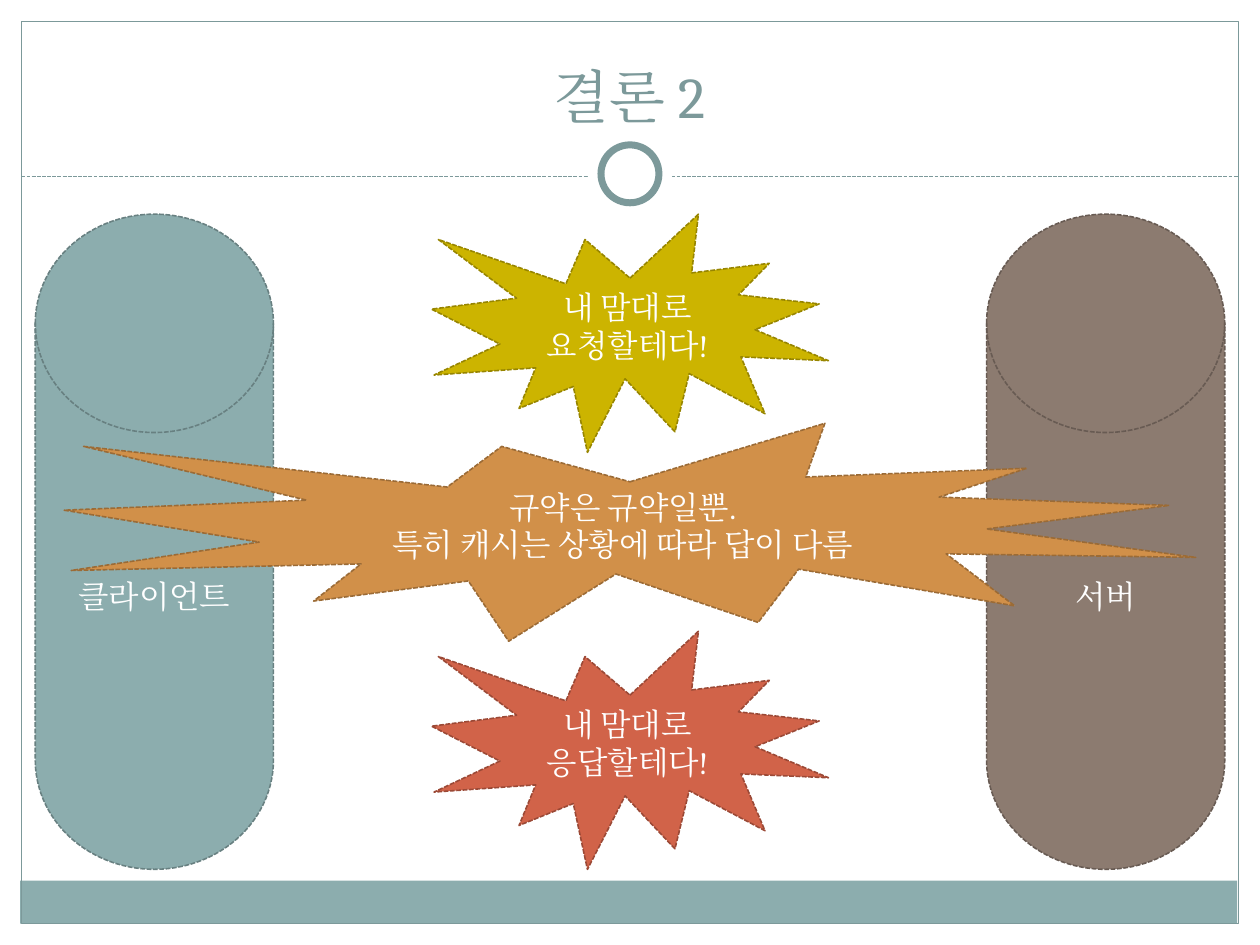
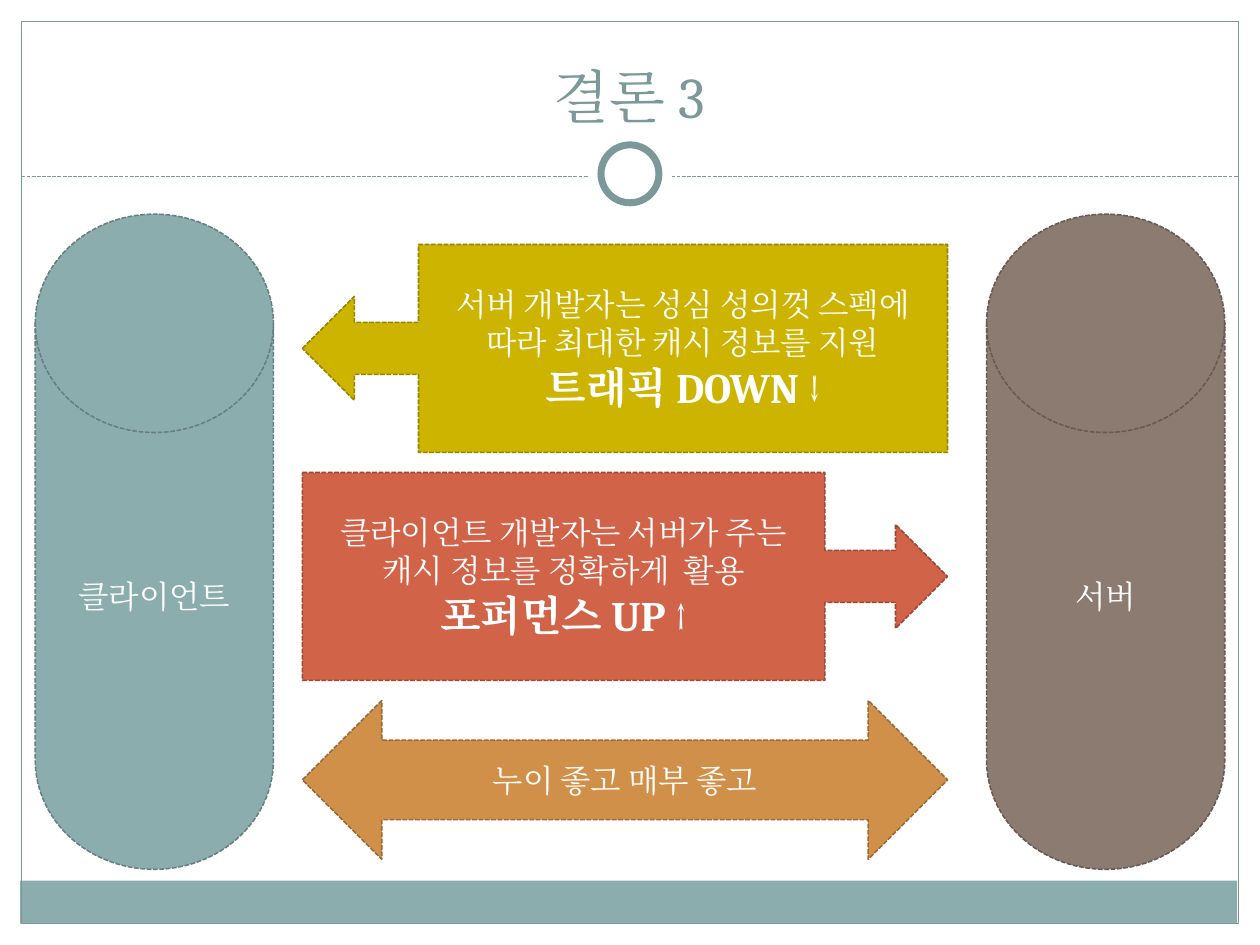
import pptx
import pptx.util
import pptx.dml.color
import pptx.enum.dml
import pptx.enum.shapes
import pptx.enum.text
import pptx.oxml.ns
import lxml.etree

Inches = pptx.util.Inches
Pt = pptx.util.Pt
KIND = pptx.enum.shapes.MSO_SHAPE
DASH = pptx.enum.dml.MSO_LINE.SQUARE_DOT
CENTER = pptx.enum.text.PP_ALIGN.CENTER
ANCHOR = pptx.enum.text.MSO_ANCHOR

FONT = "Cambria"
WHITE = "FFFFFF"
SLATE = "7C999A"
TEAL = ("8CADAE", "688081")
BROWN = ("8C7B70", "685B53")
GOLD = ("CCB400", "978500")
RED = ("D16349", "9B4936")
AMBER = ("D19049", "9B6B36")

WIDE, HIGH = 10, 7.5
EDGE = 0.17
RULE = 1.4
BODY = (0.28, 1.7, 9.44, 5.2)
POST = 1.89


def paint(code):
    return pptx.dml.color.RGBColor.from_string(code)


def stroke(line, code, width, dash=None):
    line.color.rgb = paint(code)
    line.width = Pt(width)
    if dash:
        line.dash_style = dash


def write(para, text, size, code, bold=False):
    para.alignment = CENTER
    run = para.add_run()
    run.text = text
    font = run.font
    font.name, font.size, font.bold = FONT, Pt(size), bold
    font.color.rgb = paint(code)
    asian = lxml.etree.Element(pptx.oxml.ns.qn("a:ea"), typeface=FONT)
    run.font._element.find(pptx.oxml.ns.qn("a:latin")).addnext(asian)


def plain(slide, kind, box, fill=None, line=None, width=0.75, dash=None):
    shape = slide.shapes.add_shape(kind, *map(Inches, box))
    shape.shadow.inherit = False
    if fill:
        shape.fill.solid()
        shape.fill.fore_color.rgb = paint(fill)
    else:
        shape.fill.background()
    if line:
        stroke(shape.line, line, width, dash)
    else:
        shape.line.fill.background()
    return shape


def label(slide, kind, box, tone, rows, adjust=(), inset=0.1):
    shape = plain(slide, kind, box, *tone, width=0.9, dash=DASH)
    for spot, value in enumerate(adjust):
        shape.adjustments[spot] = value
    frame = shape.text_frame
    frame.word_wrap = True
    frame.vertical_anchor = ANCHOR.MIDDLE
    frame.margin_left = frame.margin_right = Inches(inset)
    for spot, (text, size, bold) in enumerate(rows):
        para = frame.add_paragraph() if spot else frame.paragraphs[0]
        write(para, text, size, WHITE, bold)


def ring(slide, mid, size, **look):
    box = (WIDE / 2 - size / 2, mid - size / 2, size, size)
    return plain(slide, KIND.OVAL, box, **look)


def rule(slide, left, right, top):
    kind = pptx.enum.shapes.MSO_CONNECTOR.STRAIGHT
    line = slide.shapes.add_connector(kind, *map(Inches, (left, top, right, top)))
    stroke(line.line, SLATE, 0.75, DASH)
    props = line.element.spPr
    lxml.etree.SubElement(props, pptx.oxml.ns.qn("a:effectLst"))
    return line


def dress(slide, layout):
    for holder in list(layout.placeholders):
        if holder.placeholder_format.idx:
            holder.element.getparent().remove(holder.element)
    inner = WIDE - 2 * EDGE
    bands = (
        ((0, 0, WIDE, 1.52), WHITE),
        ((0, 0, EDGE, HIGH), WHITE),
        ((WIDE - EDGE, 0, EDGE, HIGH), WHITE),
        ((0.16, 6.99, inner, 0.34), TEAL[0]),
    )
    parts = [plain(slide, KIND.RECTANGLE, box, fill) for box, fill in bands]
    parts += [
        plain(slide, KIND.RECTANGLE, (EDGE, EDGE, inner, HIGH - 2 * EDGE), line=SLATE),
        rule(slide, EDGE, WIDE - EDGE, RULE),
        ring(slide, 1.38, 0.67, fill=WHITE),
        ring(slide, 1.38, 0.46, fill=WHITE, line=SLATE, width=4),
    ]
    for part in parts:
        layout.shapes.element.append(part.element)


def head(slide, text, box):
    title = slide.shapes.title
    title.left, title.top, title.width, title.height = map(Inches, box)
    frame = title.text_frame
    frame.word_wrap = True
    frame.auto_size = pptx.enum.text.MSO_AUTO_SIZE.NONE
    frame.vertical_anchor = ANCHOR.BOTTOM
    write(frame.paragraphs[0], text, 33, SLATE)


def posts(slide, box):
    left, top, width, height = box
    pairs = ((left, TEAL, "클라이언트"), (left + width - POST, BROWN, "서버"))
    for side, tone, text in pairs:
        label(slide, KIND.FLOWCHART_MAGNETIC_DISK, (side, top, POST, height),
              tone, [(text, 18, False)])


def bursts(slide, box):
    left, top, width, height = box
    wide, high = 3.15, 1.89
    side = left + (width - wide) / 2
    ends = (
        (top, GOLD, "내 맘대로 요청할테다!"),
        (top + height - high, RED, "내 맘대로 응답할테다!"),
    )
    for place, tone, text in ends:
        label(slide, KIND.EXPLOSION1, (side, place, wide, high), tone,
              [(text, 18, False)])
    rows = [("규약은 규약일뿐.", 18, False),
            ("특히 캐시는 상황에 따라 답이 다름", 18, False)]
    label(slide, KIND.EXPLOSION1, (left + 0.23, top + 1.66, width - 0.46, 1.73),
          AMBER, rows)


def arrows(slide, box):
    left, top, width, _ = box
    side, wide, high, gap = left + 2.12, 5.12, 1.65, 0.16
    first = top + 0.24
    calls = (
        (KIND.LEFT_ARROW_CALLOUT, GOLD, 0.82,
         "서버 개발자는 성심 성의껏 스펙에 따라 최대한 캐시 정보를 지원",
         "트래픽 DOWN ↓"),
        (KIND.RIGHT_ARROW_CALLOUT, RED, 0.81,
         "클라이언트 개발자는 서버가 주는 캐시 정보를 정확하게  활용",
         "포퍼먼스 UP ↑"),
    )
    for spot, (kind, tone, share, text, gain) in enumerate(calls):
        place = (side, first + spot * (high + gap), wide, high)
        label(slide, kind, place, tone, [(text, 18, False), (gain, 24, True)],
              (0.25, 0.25, 0.25, share), 0.2)
    label(slide, KIND.LEFT_RIGHT_ARROW,
          (side, first + 2 * (high + gap), wide, 1.26), AMBER,
          [("누이 좋고 매부 좋고", 18, False)])


def main():
    deck = pptx.Presentation()
    deck.slide_width, deck.slide_height = Inches(WIDE), Inches(HIGH)
    layout = deck.slide_layouts[5]
    pages = (("결론 2", bursts), ("결론 3", arrows))
    for spot, (text, fill) in enumerate(pages):
        slide = deck.slides.add_slide(layout)
        if spot == 0:
            dress(slide, layout)
        head(slide, text, (0.33, 0.25, 9.33, 0.83))
        posts(slide, BODY)
        fill(slide, BODY)
    deck.save("out.pptx")


if __name__ == "__main__":
    main()
